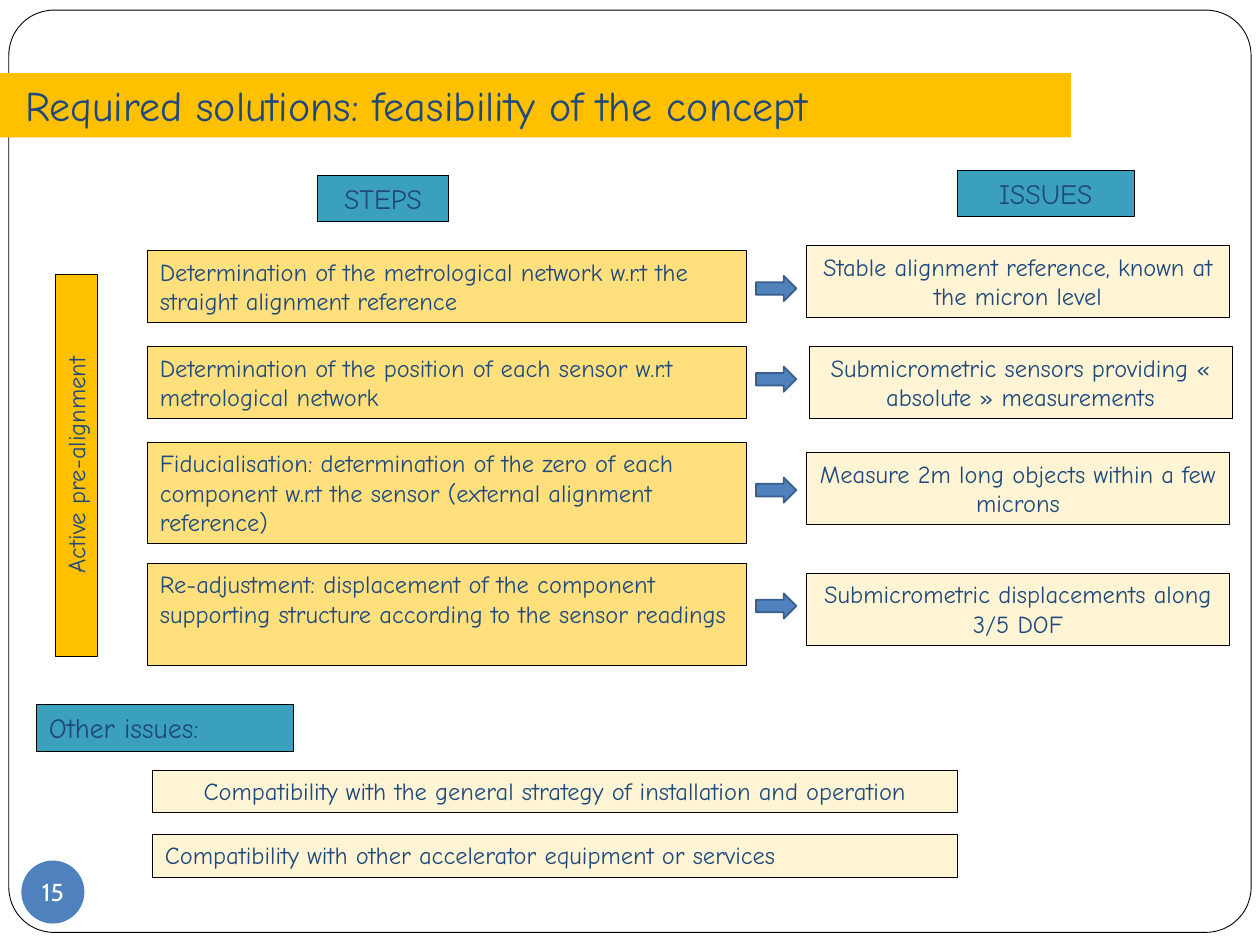
from dataclasses import dataclass

from pptx import Presentation
from pptx.dml.color import RGBColor
from pptx.enum.shapes import MSO_SHAPE
from pptx.enum.text import MSO_ANCHOR, PP_ALIGN
from pptx.util import Inches, Pt

RECT, ROUNDED = MSO_SHAPE.RECTANGLE, MSO_SHAPE.ROUNDED_RECTANGLE
OVAL, ARROW = MSO_SHAPE.OVAL, MSO_SHAPE.RIGHT_ARROW
TOP, MIDDLE = MSO_ANCHOR.TOP, MSO_ANCHOR.MIDDLE
LEFT, CENTER = PP_ALIGN.LEFT, PP_ALIGN.CENTER


@dataclass(frozen=True)
class Theme:
    font: str = "Comic Neue"
    number_font: str = "Cabin"
    text: str = "1F497D"
    white: str = "FFFFFF"
    black: str = "000000"
    gold: str = "FFC000"
    step: str = "FFE07D"
    issue: str = "FFF5D5"
    heading: str = "3BA0BB"
    blue: str = "4F81BD"
    arrow_line: str = "3A5F8C"
    title_size: int = 24
    heading_size: int = 16
    body_size: int = 14


THEME = Theme()

# step, its top and height, issue, its left and top, arrow top
ROWS = [
    ("Determination of the metrological network w.r.t the straight alignment reference",
     1.99, 0.57, "Stable alignment reference, known at the micron level", 6.4, 1.95, 2.19),
    ("Determination of the position of each sensor w.r.t metrological network",
     2.75, 0.57, "Submicrometric sensors providing « absolute » measurements", 6.42, 2.75, 2.91),
    ("Fiducialisation: determination of the zero of each component w.r.t the sensor "
     "(external alignment reference)",
     3.51, 0.8, "Measure 2m long objects within a few microns", 6.4, 3.59, 3.79),
    ("Re-adjustment: displacement of the component supporting structure according to "
     "the sensor readings",
     4.47, 0.81, "Submicrometric displacements along 3/5 DOF", 6.4, 4.55, 4.71),
]
HEADINGS = [
    ("STEPS", 2.52, 1.39, 1.04, CENTER),
    ("ISSUES", 7.6, 1.35, 1.4, CENTER),
    ("Other issues:", 0.29, 5.59, 2.04, LEFT),
]
OTHER_ISSUES = [
    ("Compatibility with the general strategy of installation and operation", 6.11, CENTER),
    ("Compatibility with other accelerator equipment or services", 6.62, LEFT),
]


def add_shape(s, kind, box, fill, line=None, width=0.25):
    sp = s.shapes.add_shape(kind, *map(Inches, box))
    sp.shadow.inherit = False
    sp.fill.solid()
    sp.fill.fore_color.rgb = RGBColor.from_string(fill)
    if line:
        sp.line.color.rgb = RGBColor.from_string(line)
        sp.line.width = Pt(width)
    else:
        sp.line.fill.background()
    return sp


def set_text(sp, text, size, align=LEFT, color=THEME.text, font=THEME.font, anchor=TOP):
    tf = sp.text_frame
    tf.word_wrap = True
    tf.vertical_anchor = anchor
    tf.text = text
    p = tf.paragraphs[0]
    p.alignment = align
    f = p.runs[0].font
    f.size = Pt(size)
    f.name = font
    f.color.rgb = RGBColor.from_string(color)


def add_box(s, text, box, fill, align=LEFT, size=THEME.body_size):
    """Add an outlined rectangle with text."""
    sp = add_shape(s, RECT, box, fill, THEME.black)
    set_text(sp, text, size, align)
    return sp


def add_frame(s):
    sp = add_shape(s, ROUNDED, (0.07, 0.08, 9.86, 7.32), THEME.white, THEME.black, 0.5)
    sp.adjustments[0] = 0.049


def add_title(s, text):
    sp = add_shape(s, RECT, (0, 0.58, 8.5, 0.51), THEME.gold)
    set_text(sp, text, THEME.title_size)
    sp.text_frame.margin_left = Inches(0.2)


def add_row(s, step, step_top, height, issue, issue_left, issue_top, arrow_top):
    add_box(s, step, (1.17, step_top, 4.75, height), THEME.step)
    add_box(s, issue, (issue_left, issue_top, 3.36, 0.57), THEME.issue, CENTER)
    add_shape(s, ARROW, (6, arrow_top, 0.32, 0.2), THEME.blue, THEME.arrow_line, 1)


def add_page_number(s, number):
    sp = add_shape(s, OVAL, (0.17, 6.83, 0.5, 0.5), THEME.blue)
    set_text(sp, number, THEME.body_size, CENTER, THEME.white, THEME.number_font, MIDDLE)
    tf = sp.text_frame
    tf.word_wrap = False
    tf.margin_left = tf.margin_right = tf.margin_top = tf.margin_bottom = 0


def main():
    prs = Presentation()
    prs.slide_width, prs.slide_height = Inches(10), Inches(7.5)
    s = prs.slides.add_slide(prs.slide_layouts[6])

    add_frame(s)
    add_title(s, "Required solutions: feasibility of the concept")
    side = add_box(s, "Active pre-alignment", (-0.91, 3.52, 3.03, 0.34), THEME.gold, CENTER)
    side.rotation = 270
    for row in ROWS:
        add_row(s, *row)
    for text, left, top, width, align in HEADINGS:
        add_box(s, text, (left, top, width, 0.37), THEME.heading, align, THEME.heading_size)
    for text, top, align in OTHER_ISSUES:
        add_box(s, text, (1.21, top, 6.39, 0.34), THEME.issue, align)
    add_page_number(s, "15")

    prs.save("out.pptx")


if __name__ == "__main__":
    main()
